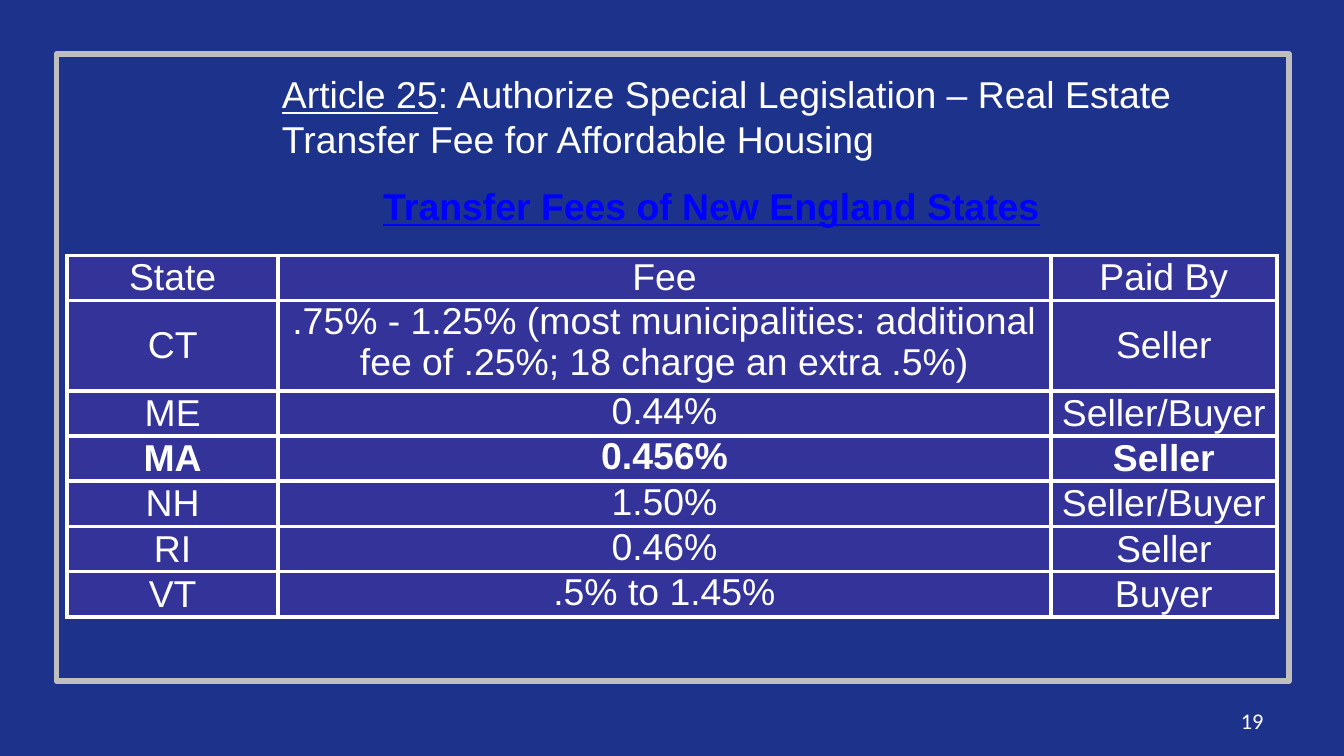
from pptx import Presentation
from pptx.dml.color import RGBColor
from pptx.enum.shapes import MSO_SHAPE as Shape
from pptx.enum.text import MSO_ANCHOR as Anchor, PP_ALIGN as Align
from pptx.oxml import parse_xml
from pptx.oxml.ns import nsdecls
from pptx.util import Inches, Pt

# Content
TITLE = [("Article 25", True),
         (": Authorize Special Legislation – Real Estate "
          "Transfer Fee for Affordable Housing", False)]
HEADING = [("Transfer Fees of New England States", True)]
PAGE = "19"
ROWS = [
    ("State", "Fee", "Paid By"),
    ("CT", ".75% - 1.25% (most municipalities: additional "
           "fee of .25%; 18 charge an extra .5%)", "Seller"),
    ("ME", "0.44%", "Seller/Buyer"),
    ("MA", "0.456%", "Seller"),
    ("NH", "1.50%", "Seller/Buyer"),
    ("RI", "0.46%", "Seller"),
    ("VT", ".5% to 1.45%", "Buyer"),
]
HOME = "MA"  # state shown in bold
TALL = "CT"  # state whose fee takes two lines
WIDTHS = (1.57, 5.75, 1.68)
TABLE_H = 2.69

NAVY, INDIGO, GREY = "1D328B", "333399", "BFBFBF"
WHITE, BLUE = "FFFFFF", "0000FF"


def color(code):
    return RGBColor.from_string(code)


def write(frame, runs, size=20, font="Arial", tint=WHITE, bold=False,
          align=Align.LEFT, pitch=None):
    """Fill a text frame from a string or from (text, underline) pairs."""
    frame.word_wrap = True
    para = frame.paragraphs[0]
    para.alignment = align
    if pitch:
        para.line_spacing = Pt(pitch)
    for text, under in [(runs, False)] if isinstance(runs, str) else runs:
        run = para.add_run()
        run.text = text
        run.font.size, run.font.name = Pt(size), font
        run.font.bold, run.font.underline = bold, under
        run.font.color.rgb = color(tint)


def add_text(place, runs, anchor=Anchor.TOP, **style):
    frame = slide.shapes.add_textbox(*map(Inches, place)).text_frame
    frame.vertical_anchor = anchor
    write(frame, runs, **style)


def add_border(cell, tint, width):
    props = cell._tc.get_or_add_tcPr()
    for spot, side in enumerate(("lnL", "lnR", "lnT", "lnB")):
        props.insert(spot, parse_xml(
            f'<a:{side} {nsdecls("a")} w="{Pt(width)}"><a:solidFill>'
            f'<a:srgbClr val="{tint}"/></a:solidFill></a:{side}>'))


deck = Presentation()
deck.slide_width, deck.slide_height = Inches(10), Inches(5.625)
slide = deck.slides.add_slide(deck.slide_layouts[6])
slide.background.fill.solid()
slide.background.fill.fore_color.rgb = color(NAVY)

# Frame around the content
box = slide.shapes.add_shape(Shape.RECTANGLE,
                             *map(Inches, (0.42, 0.4, 9.17, 4.67)))
box.shadow.inherit = False
box.fill.background()
box.line.color.rgb, box.line.width = color(GREY), Pt(3)
box.line._get_or_add_ln().append(parse_xml(f'<a:round {nsdecls("a")}/>'))

# Page number, title and heading
add_text((7.17, 5.21, 2.33, 0.3), PAGE, Anchor.MIDDLE, size=12,
         font="Calibri", align=Align.RIGHT)
add_text((2, 0.48, 7.5, 0.77), TITLE, pitch=24)
add_text((1.42, 1.31, 7.75, 0.44), HEADING, Anchor.MIDDLE, tint=BLUE,
         bold=True, align=Align.CENTER, pitch=24)

# Fee table: the tall row takes two units of height
unit = TABLE_H / (len(ROWS) + 1)
table = slide.shapes.add_table(
    len(ROWS), len(WIDTHS), Inches(0.5), Inches(1.9),
    Inches(sum(WIDTHS)), Inches(TABLE_H)).table
table.first_row = table.horz_banding = False
for col, width in zip(table.columns, WIDTHS):
    col.width = Inches(width)
for r, row in enumerate(ROWS):
    table.rows[r].height = Inches(unit * (2 if row[0] == TALL else 1))
    for c, text in enumerate(row):
        cell = table.cell(r, c)
        cell.margin_left = cell.margin_right = 0
        cell.margin_top = cell.margin_bottom = 0
        top = r > 0 and c == 1
        cell.vertical_anchor = Anchor.TOP if top else Anchor.MIDDLE
        cell.fill.solid()
        cell.fill.fore_color.rgb = color(INDIGO)
        add_border(cell, WHITE, 2.25)
        write(cell.text_frame, text, bold=row[0] == HOME,
              align=Align.CENTER)

deck.save("out.pptx")
